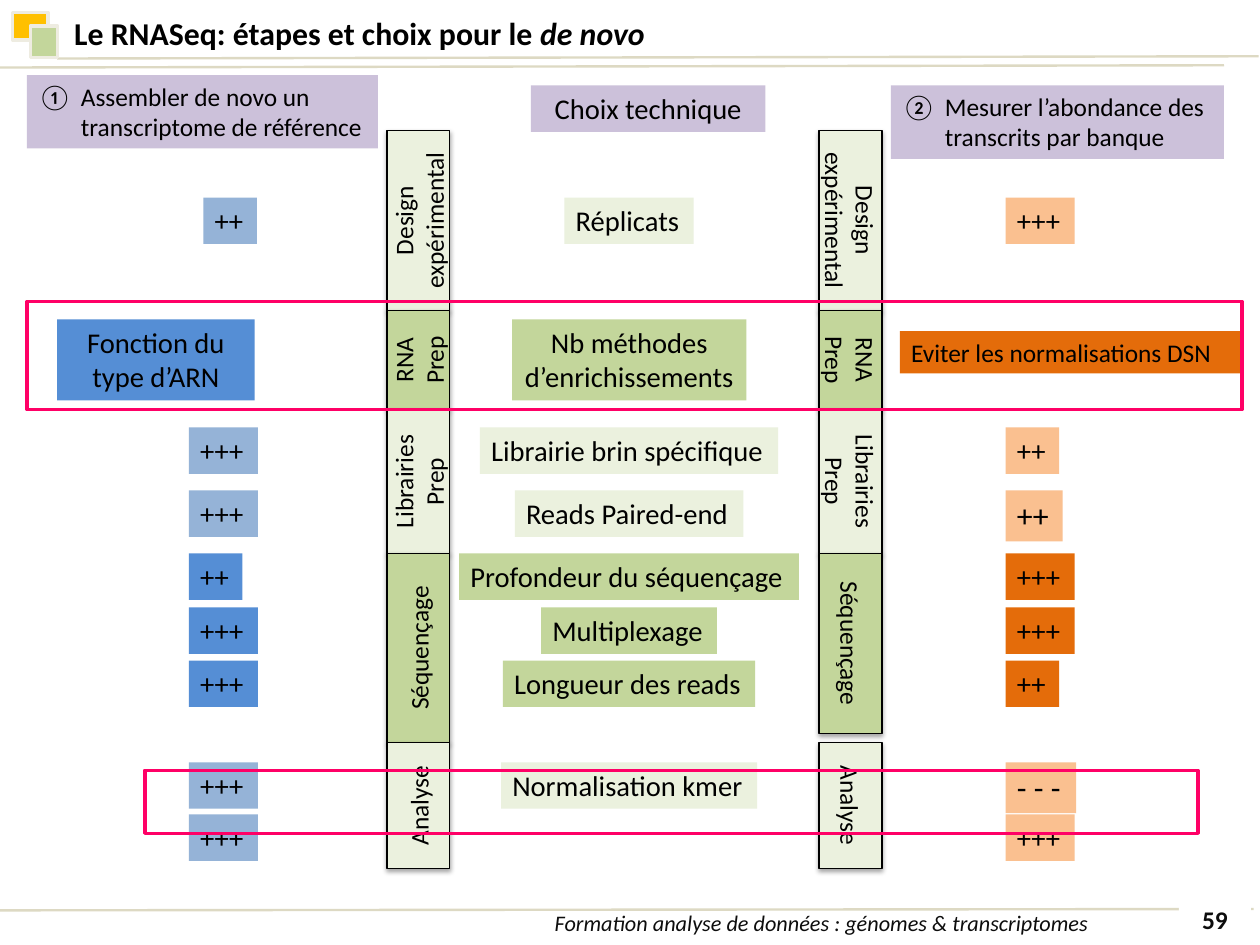
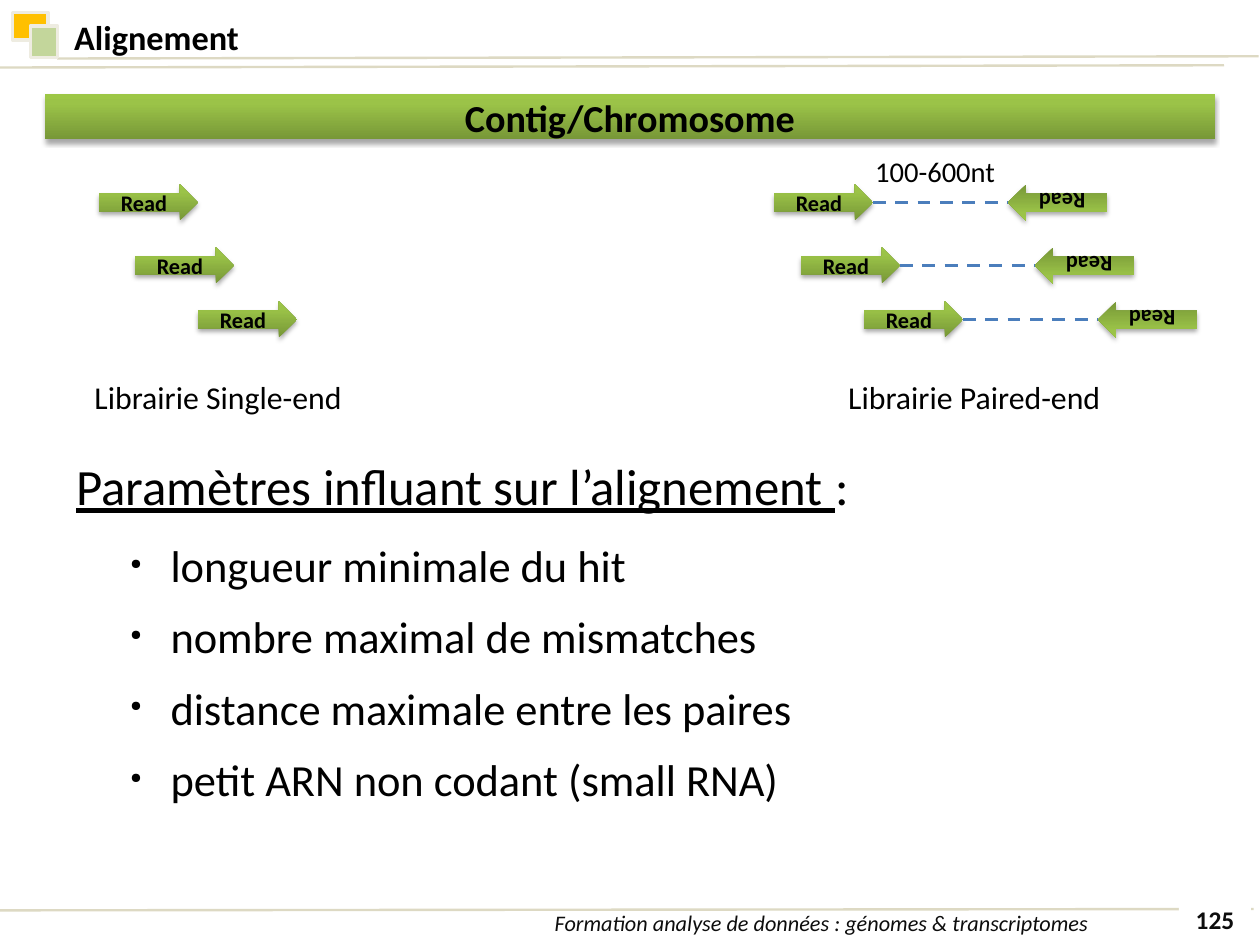
from copy import deepcopy

from lxml.etree import SubElement
from pptx import Presentation
from pptx.dml.color import RGBColor
from pptx.enum.dml import MSO_LINE
from pptx.enum.shapes import MSO_CONNECTOR, MSO_SHAPE
from pptx.enum.text import MSO_ANCHOR, MSO_AUTO_SIZE, PP_ALIGN
from pptx.oxml.ns import qn
from pptx.util import Cm, Pt

FONT = "Calibri"
BLACK = RGBColor(0x00, 0x00, 0x00)
INK = RGBColor(0x0D, 0x0D, 0x0D)
WHITE = RGBColor(0xFF, 0xFF, 0xFF)
SAND = RGBColor(0xDD, 0xD9, 0xC3)
CREAM = RGBColor(0xEE, 0xEC, 0xE1)
AMBER = RGBColor(0xFF, 0xC0, 0x00)
GREEN = RGBColor(0xC3, 0xD6, 0x9B)
PALE_GREEN = RGBColor(0xEB, 0xF1, 0xDE)
LILAC = RGBColor(0xCC, 0xC1, 0xDA)
BLUE = RGBColor(0x55, 0x8E, 0xD5)
PALE_BLUE = RGBColor(0x95, 0xB3, 0xD7)
ORANGE = RGBColor(0xE4, 0x6C, 0x0A)
PALE_ORANGE = RGBColor(0xFA, 0xC0, 0x90)
PINK = RGBColor(0xFF, 0x00, 0x66)
LINK_BLUE = RGBColor(0x4B, 0x7E, 0xBC)
GRADIENT = [
    (0, RGBColor(0x77, 0x97, 0x37)),
    (0.8, RGBColor(0x9B, 0xC3, 0x48)),
    (1, RGBColor(0x9D, 0xC7, 0x46)),
]

# Palettes of a row: left mark, central label, right mark
PALE = (PALE_BLUE, PALE_GREEN, PALE_ORANGE)
STRONG = (BLUE, GREEN, ORANGE)


# Basic parts
def lengths(box):
    return [Cm(value) for value in box]


def add_span(para, text, size, color=BLACK, bold=False, italic=False, underline=False):
    span = para.add_run()
    span.text = text
    font = span.font
    font.name, font.size, font.color.rgb = FONT, Pt(size), color
    font.bold, font.italic, font.underline = bold, italic, underline


def set_bullet(para, margin, hanging, tag=None, size=None, **settings):
    properties = para._p.get_or_add_pPr()
    properties.set("marL", str(Cm(margin)))
    properties.set("indent", str(-Cm(hanging)))
    if size:
        SubElement(properties, qn("a:buSzPct"), val=str(size * 1000))
    SubElement(properties, qn(tag or "a:buNone"), **settings)


def add_shape(page, box, fill=None, line=None, width=1.0, kind=MSO_SHAPE.RECTANGLE):
    shape = page.shapes.add_shape(kind, *lengths(box))
    shape.shadow.inherit = False
    if fill is None:
        shape.fill.background()
    else:
        shape.fill.solid()
        shape.fill.fore_color.rgb = fill
    if line is None:
        shape.line.fill.background()
    else:
        shape.line.color.rgb = line
        shape.line.width = Pt(width)
    return shape


def write_centred(shape, text, size, spacing=None, **style):
    frame = shape.text_frame
    frame.word_wrap = True
    frame.vertical_anchor = MSO_ANCHOR.MIDDLE
    para = frame.paragraphs[0]
    para.alignment = PP_ALIGN.CENTER
    if spacing:
        para.line_spacing = spacing
    add_span(para, text, size, **style)


def add_line(page, start, end, color, width, dash=None):
    line = page.shapes.add_connector(MSO_CONNECTOR.STRAIGHT, *lengths(start + end))
    line.line.color.rgb = color
    line.line.width = Pt(width)
    if dash:
        line.line.dash_style = dash
    SubElement(line._element.spPr, qn("a:effectLst"))


def add_label(page, box, text, size=18, fill=None, wrap=False, centred=False, number=None):
    label = page.shapes.add_textbox(*lengths(box))
    if fill is not None:
        label.fill.solid()
        label.fill.fore_color.rgb = fill
    frame = label.text_frame
    frame.word_wrap = wrap
    frame.auto_size = MSO_AUTO_SIZE.SHAPE_TO_FIT_TEXT
    para = frame.paragraphs[0]
    if centred:
        para.alignment = PP_ALIGN.CENTER
    if number:
        set_bullet(para, 0.95, 0.95, "a:buAutoNum",
                   type="circleNumDbPlain", startAt=str(number))
    add_span(para, text, size)


def add_shadow(shape):
    effects = shape._element.spPr.find(qn("a:effectLst"))
    shadow = SubElement(effects, qn("a:outerShdw"), blurRad=str(Pt(3.1)),
                        dist=str(Pt(1.8)), dir="5400000", rotWithShape="0")
    color = SubElement(shadow, qn("a:srgbClr"), val=str(BLACK))
    SubElement(color, qn("a:alpha"), val="35000")


def add_glossy(page, box, text, size, kind=MSO_SHAPE.RECTANGLE, rotation=0):
    shape = add_shape(page, box, kind=kind)
    shape.fill.gradient()
    shape.fill.gradient_angle = 90
    stop_list = shape._element.spPr.find(".//" + qn("a:gsLst"))
    stop_list.append(deepcopy(stop_list[-1]))
    for stop, (position, color) in zip(shape.fill.gradient_stops, GRADIENT):
        stop.position = position
        stop.color.rgb = color
    add_shadow(shape)
    shape.rotation = rotation
    write_centred(shape, text, size, bold=True)


# Frame shared by every page
def add_page(deck, number, title, title_size, title_top):
    page = deck.slides.add_slide(deck.slide_layouts[6])
    add_line(page, (1.27, 1.3), (27.97, 1.25), SAND, 1.5)
    add_line(page, (0, 1.5), (27.2, 1.45), SAND, 1.5)
    add_shape(page, (0.28, 0.28, 0.79, 0.61), AMBER, CREAM, 2)
    add_shape(page, (0.67, 0.58, 0.61, 0.7), GREEN, CREAM, 2)

    footer = add_shape(page, (8.86, 20.2, 18.8, 0.69), WHITE)
    write_centred(footer, "Formation analyse de données : génomes & transcriptomes",
                  14, 0.9, color=INK, italic=True)
    add_line(page, (0, 20.23), (27.86, 20.2), SAND, 1.5)
    badge = add_shape(page, (26.2, 20.1, 1.6, 0.74), WHITE)
    write_centred(badge, str(number), 16, 0.9, color=INK, bold=True)

    heading = page.shapes.add_textbox(*lengths((1.4, title_top, 25.2, 1.1)))
    frame = heading.text_frame
    frame.word_wrap = True
    frame.vertical_anchor = MSO_ANCHOR.MIDDLE
    for text, italic in title:
        add_span(frame.paragraphs[0], text, title_size, bold=True, italic=italic)
    return page


# Steps page
def add_step_chain(page, left, top, rotation, steps):
    thickness = 1.4
    middle = left + thickness / 2
    for index, (text, length, gap) in enumerate(steps):
        box = (middle - length / 2, top + (length - thickness) / 2, length, thickness)
        step = add_shape(page, box, (PALE_GREEN, GREEN)[index % 2], BLACK, 0.75)
        add_shadow(step)
        step.rotation = rotation
        write_centred(step, text, 16)
        top += length + gap


def add_mark(page, left, top, mark, fill, size=18):
    # A plus sign is wider than a dash or a space
    glyph_width = 0.34 if "+" in mark else 0.19
    width = 0.51 + glyph_width * len(mark) * size / 18
    add_label(page, (left, top, width, 0.05 * size + 0.13), mark, size, fill)


def add_choice_row(page, top, palette, choice, left_mark, right_mark):
    left_fill, choice_fill, right_fill = palette
    if choice:
        text, width = choice
        add_label(page, (13.98 - width / 2, top, width, 1.03), text, fill=choice_fill)
    mark, left = left_mark
    add_mark(page, left, top, mark, left_fill)
    mark, size = right_mark
    add_mark(page, 22.35, top, mark, right_fill, size)


def build_steps_page(deck):
    page = add_page(deck, 59, [("Le RNASeq: étapes et choix pour le ", False),
                               ("de novo", True)], 20, 0.18)
    # Column heads
    add_label(page, (0.6, 1.67, 7.8, 1.63), "Assembler de novo un transcriptome de référence",
              16, LILAC, wrap=True, number=1)
    add_label(page, (11.8, 1.9, 5.21, 1.03), "Choix technique", 18, LILAC,
              wrap=True, centred=True)
    add_label(page, (19.8, 1.9, 7.4, 1.63), "Mesurer l’abondance des transcrits par banque",
              16, LILAC, wrap=True, number=2)

    # Vertical chains, the right one with a gap before the last step
    for left, rotation, sequencing, gap in ((8.6, 270, 4.2, 0), (18.2, 90, 4, 0.2)):
        add_step_chain(page, left, 2.9, rotation, [
            ("Design expérimental", 4, 0), ("RNA Prep", 2.2, 0),
            ("Librairies Prep", 3.2, 0), ("Séquençage", sequencing, gap),
            ("Analyse", 2.8, 0)])

    # Choices with their marks on both sides
    for row in (
        (4.39, PALE, ("Réplicats", 2.87), ("++", 4.52), ("+++", 18)),
        (9.5, PALE, ("Librairie brin spécifique", 6.63), ("+++", 4.2), ("++", 18)),
        (10.9, PALE, ("Reads Paired-end", 5.08), ("+++", 4.2), ("++", 20)),
        (12.3, STRONG, ("Profondeur du séquençage", 7.55), ("++", 4.2), ("+++", 18)),
        (13.5, STRONG, ("Multiplexage", 3.91), ("+++", 4.2), ("+++", 18)),
        (14.68, STRONG, ("Longueur des reads", 5.61), ("+++", 4.2), ("++", 18)),
        (16.94, PALE, ("Normalisation kmer", 5.69), ("+++", 4.2), ("- - -", 20)),
        (18.1, PALE, None, ("+++", 4.2), ("+++", 18)),
    ):
        add_choice_row(page, *row)

    # Enrichment row
    add_label(page, (1.27, 7.1, 4.39, 1.8), "Fonction du type d’ARN", 18, BLUE,
              wrap=True, centred=True)
    add_label(page, (11.38, 7.1, 5.21, 1.8), "Nb méthodes d’enrichissements", 18, GREEN,
              wrap=True, centred=True)
    add_label(page, (20, 7.36, 7.6, 0.94), "Eviter les normalisations DSN", 16, ORANGE,
              wrap=True)

    # Highlight frames
    for box in ((0.6, 6.7, 27, 2.4), (3.22, 17.12, 23.4, 1.4)):
        add_shape(page, box, line=PINK, width=2.25)


# Alignment page
def add_read(page, left, top, rotation=0):
    add_glossy(page, (left, top, 2.2, 0.8), "Read", 14, MSO_SHAPE.RIGHT_ARROW, rotation)


def add_library(page, left, paired=False):
    for offset, top in ((0, 4.1), (0.6 if paired else 0.8, 5.5),
                        (2 if paired else 2.2, 6.7)):
        start = left + offset
        add_read(page, start, top)
        if paired:
            add_read(page, start + 5.2, top, 180)
            add_line(page, (start + 2.2, top + 0.4), (start + 5.2, top + 0.4),
                     LINK_BLUE, 2, MSO_LINE.DASH)


def add_parameters(page, box, lead, items):
    frame = page.shapes.add_textbox(*lengths(box)).text_frame
    frame.word_wrap = True
    frame.margin_left = frame.margin_right = frame.margin_top = frame.margin_bottom = 0
    para = frame.paragraphs[0]
    set_bullet(para, 1.19, 0.89)
    para.space_after = Pt(14.2)
    add_span(para, lead, 32, underline=True)
    add_span(para, ":", 32)
    for item in items:
        para = frame.add_paragraph()
        para.level = 1
        set_bullet(para, 2.39, 0.89, "a:buChar", 32, char="●")
        para.space_after = Pt(11.3)
        add_span(para, item, 28)


def build_alignment_page(deck):
    page = add_page(deck, 125, [("Alignement", False)], 21.6, 0.26)
    add_parameters(page, (1.4, 10.1, 25.2, 8.66), "Paramètres influant sur l’alignement ", [
        "longueur minimale du hit",
        "nombre maximal de mismatches",
        "distance maximale entre les paires",
        "petit ARN non codant (small RNA)",
    ])
    add_glossy(page, (1, 2.1, 26, 1), "Contig/Chromosome", 24)
    add_library(page, 2.2)
    add_library(page, 17.2, paired=True)
    add_label(page, (1.85, 8.26, 6.07, 1.12), "Librairie Single-end", 20)
    add_label(page, (18.6, 8.26, 6.17, 1.12), "Librairie Paired-end", 20)
    add_label(page, (19.2, 3.3, 3.2, 1.03), "100-600nt")


def main():
    deck = Presentation()
    deck.slide_width, deck.slide_height = Cm(28), Cm(21)
    build_steps_page(deck)
    build_alignment_page(deck)
    deck.save("out.pptx")


if __name__ == "__main__":
    main()
